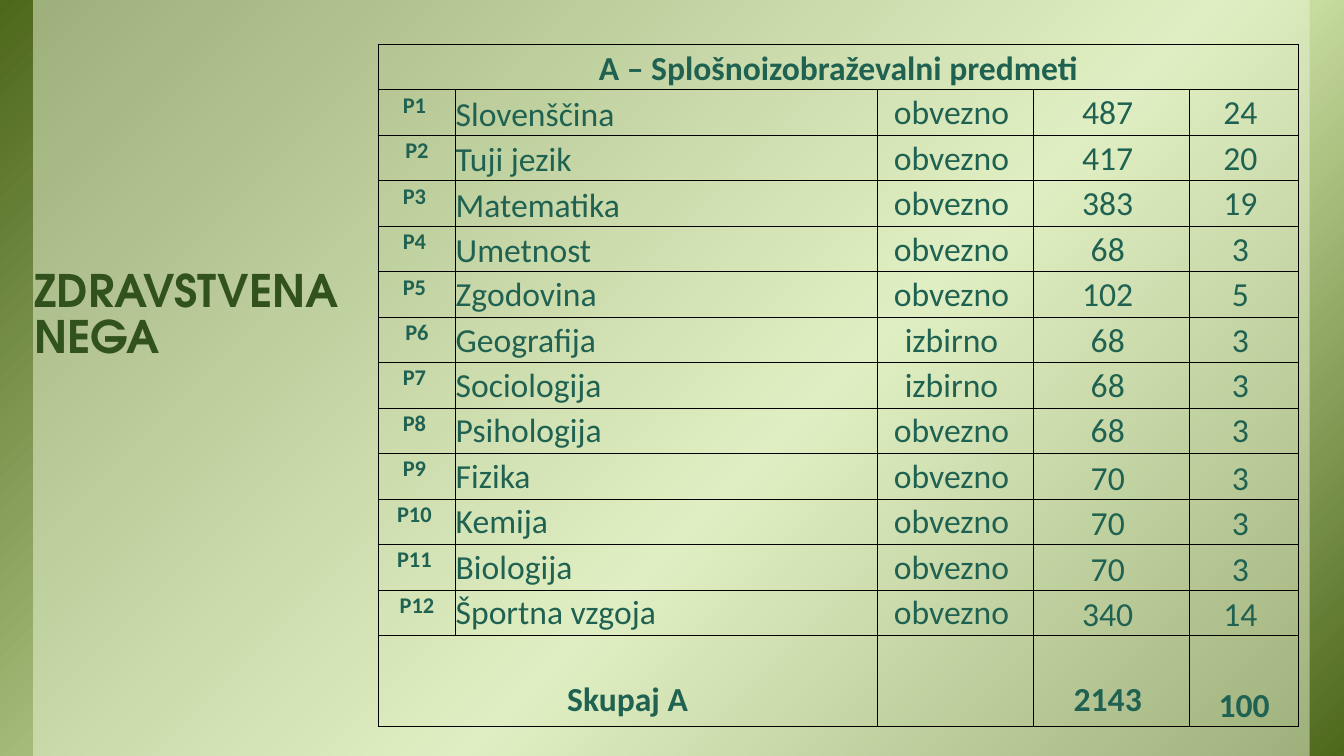
from lxml import etree
from pptx import Presentation
from pptx.dml.color import RGBColor
from pptx.enum.shapes import MSO_SHAPE
from pptx.enum.text import MSO_ANCHOR, MSO_AUTO_SIZE, PP_ALIGN
from pptx.oxml import parse_xml
from pptx.oxml.ns import nsdecls, qn
from pptx.util import Inches, Pt

RECTANGLE = MSO_SHAPE.RECTANGLE
TOP, BOTTOM = MSO_ANCHOR.TOP, MSO_ANCHOR.BOTTOM
LEFT, CENTER = PP_ALIGN.LEFT, PP_ALIGN.CENTER
TEAL = "206252"
SUBJECTS = [
    ("P1 ", "Slovenščina", "obvezno ", "487 ", "24 "),
    ("P2", "Tuji jezik", "obvezno ", "417 ", "20 "),
    ("P3 ", "Matematika", "obvezno ", "383 ", "19 "),
    ("P4 ", "Umetnost", "obvezno ", "68 ", "3 "),
    ("P5 ", "Zgodovina", "obvezno ", "102 ", "5 "),
    ("P6", "Geografija", "izbirno ", "68 ", "3 "),
    ("P7 ", "Sociologija", "izbirno ", "68 ", "3 "),
    ("P8 ", "Psihologija", "obvezno ", "68 ", "3 "),
    ("P9 ", "Fizika", "obvezno ", "70 ", "3 "),
    ("P10 ", "Kemija", "obvezno ", "70 ", "3 "),
    ("P11 ", "Biologija", "obvezno ", "70 ", "3 "),
    ("P12", "Športna vzgoja", "obvezno ", "340 ", "14 "),
]


def color(hex_text):
    return RGBColor.from_string(hex_text)


def write(cell, text, size=24, bold=False, align=CENTER, anchor=TOP):
    cell.text = text
    cell.vertical_anchor = anchor
    para = cell.text_frame.paragraphs[0]
    para.alignment = align
    para.line_spacing = 1.07
    para.font.name = "Calibri"
    para.font.size = Pt(size)
    para.font.bold = bold
    para.font.color.rgb = color(TEAL)


deck = Presentation()
deck.slide_width, deck.slide_height = Inches(13.33), Inches(7.5)
page = deck.slides.add_slide(deck.slide_layouts[5])

# Green gradient backdrop and pale panel
backdrop = page.shapes.add_shape(RECTANGLE, 0, 0, Inches(13.33), Inches(7.5))
panel = page.shapes.add_shape(RECTANGLE, Inches(0.33), 0, Inches(12.66), Inches(7.5))
for box in (backdrop, panel):
    box.shadow.inherit = False
    box.line.fill.background()

backdrop.fill.gradient()
backdrop.fill.gradient_angle = 315
stops = backdrop._element.spPr.find(qn("a:gradFill")).find(qn("a:gsLst"))
for stop in list(stops):
    stops.remove(stop)
for percent, shade in ((0, "4D671B"), (58, "D6EAAF"), (100, "4D671B")):
    stop = etree.SubElement(stops, qn("a:gs"), pos=str(percent * 1000))
    etree.SubElement(stop, qn("a:srgbClr"), val=shade)

panel.fill.solid()
panel.fill.fore_color.rgb = color("EBF5D7")
panel_color = panel._element.spPr.find(qn("a:solidFill"))[0]
etree.SubElement(panel_color, qn("a:alpha"), val="50000")

# Title, brought in front of the panel
title = page.shapes.title
page.shapes._spTree.append(title._element)
title.left, title.top = Inches(0.21), Inches(1.62)
title.width, title.height = Inches(3.62), Inches(2.05)
frame = title.text_frame
frame.text = "ZDRAVSTVENA NEGA"
frame.word_wrap = True
frame.auto_size = MSO_AUTO_SIZE.NONE
frame.vertical_anchor = BOTTOM
frame.margin_left = frame.margin_right = Inches(0.13)
frame.margin_top = frame.margin_bottom = Inches(0.07)
para = frame.paragraphs[0]
para.alignment = LEFT
para.line_spacing = 0.85
para.font.name = "TeX Gyre Adventor"
para.font.size = Pt(32)
para.font.bold = True
para.font.color.rgb = color("31521C")

# Table grid: the total row is twice as high as the others
total_row = len(SUBJECTS) + 1
table = page.shapes.add_table(total_row + 1, 5, Inches(3.75), Inches(0.44),
                              Inches(9.13), Inches(6.77)).table
table.first_row = table.horz_banding = False
for column, width in zip(table.columns, (0.77, 4.18, 1.55, 1.55, 1.08)):
    column.width = Inches(width)
for row in table.rows:
    row.height = Inches(6.77 / (total_row + 2))
table.rows[total_row].height = Inches(2 * 6.77 / (total_row + 2))

for cell in table.iter_cells():
    cell.margin_left = cell.margin_right = cell.margin_top = cell.margin_bottom = 0
    cell.fill.background()
    for position, side in enumerate(("lnL", "lnR", "lnT", "lnB")):
        cell._tc.tcPr.insert(position, parse_xml(
            f'<a:{side} {nsdecls("a")} w="12700"><a:solidFill>'
            f'<a:srgbClr val="000000"/></a:solidFill></a:{side}>'))

# Heading row
table.cell(0, 0).merge(table.cell(0, 4))
write(table.cell(0, 0), "A – Splošnoizobraževalni predmeti", bold=True, anchor=BOTTOM)

# Subject rows
for row, (code, subject, status, hours, credits) in enumerate(SUBJECTS, 1):
    number_anchor = BOTTOM if row >= 9 else TOP
    write(table.cell(row, 0), code, size=16, bold=True)
    write(table.cell(row, 1), subject, align=LEFT, anchor=BOTTOM if row <= 4 else TOP)
    write(table.cell(row, 2), status)
    write(table.cell(row, 3), hours, anchor=number_anchor)
    write(table.cell(row, 4), credits, anchor=number_anchor)

# Total row
table.cell(total_row, 0).merge(table.cell(total_row, 1))
for column, text, gap in ((0, "Skupaj A", 0.06), (3, "2143 ", 0.06), (4, "100", 0)):
    cell = table.cell(total_row, column)
    write(cell, text, bold=True, anchor=BOTTOM)
    cell.margin_bottom = Inches(gap)

deck.save("out.pptx")
